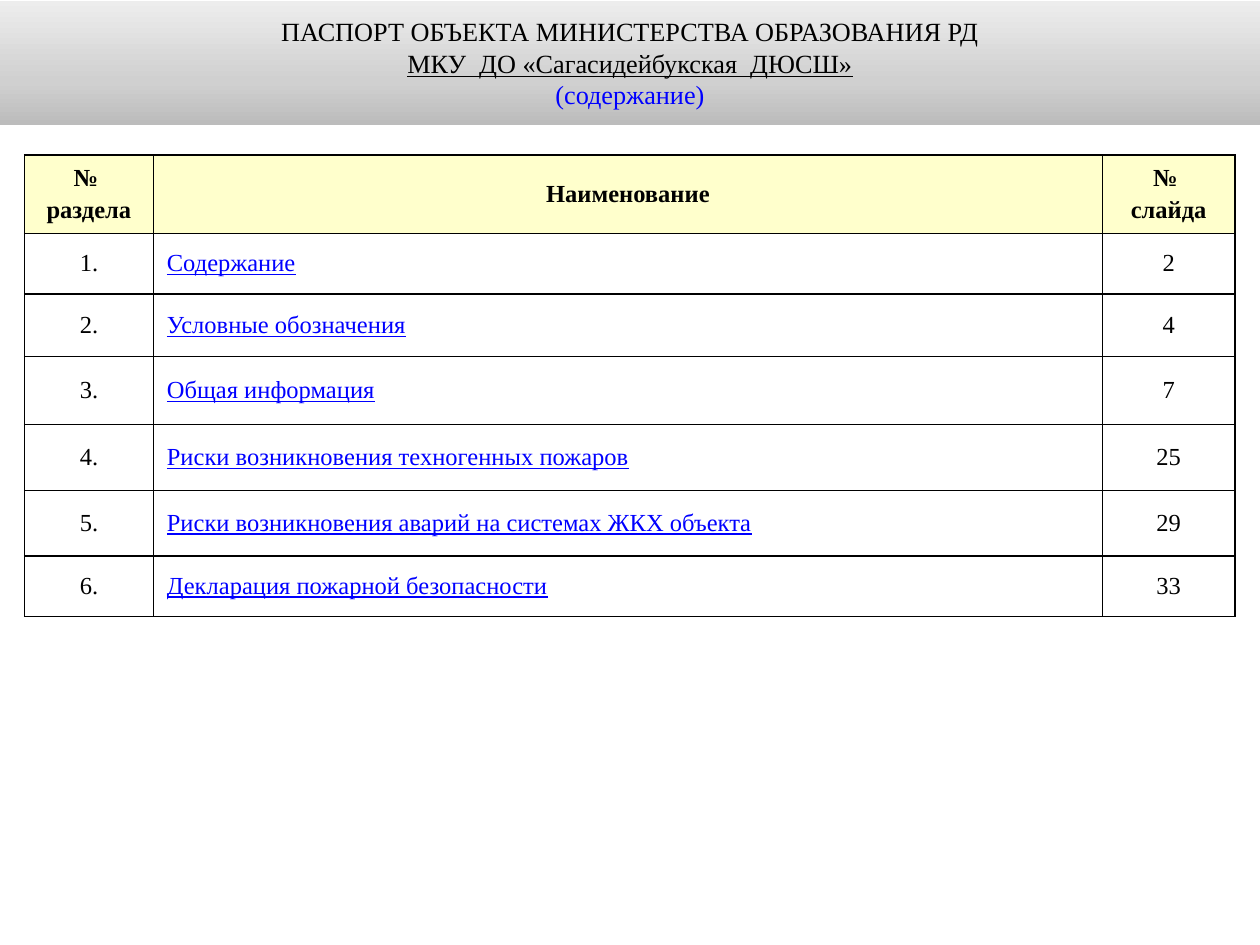
import copy
from dataclasses import dataclass

import pptx
import pptx.dml.color
import pptx.enum.text
import pptx.oxml
import pptx.oxml.ns
import pptx.util

Pt = pptx.util.Pt
Align = pptx.enum.text.PP_ALIGN
Anchor = pptx.enum.text.MSO_ANCHOR

FONT = "Times New Roman"
BLACK, BLUE, WHITE, CREAM = "000000", "0000FF", "FFFFFF", "FFFFCC"


@dataclass
class Style:
    size: float
    color: str = BLACK
    bold: bool = False
    under: bool = False


@dataclass
class Entry:
    num: str
    name: str
    page: str
    high: float


HEADS = ("№ \nраздела", "Наименование", "№ \nслайда")
WIDTHS = (73.7, 542.3, 75.7)
HEAD_HIGH = 44.9
ENTRIES = (
    Entry("1.", "Содержание", "2", 34.6),
    Entry("2.", "Условные обозначения", "4", 35.7),
    Entry("3.", "Общая информация", "7", 38.9),
    Entry("4.", "Риски возникновения техногенных пожаров", "25", 37.7),
    Entry("5.", "Риски возникновения аварий на системах ЖКХ объекта", "29", 37.4),
    Entry("6.", "Декларация пожарной безопасности", "33", 34.6),
)
TITLE = (
    ("ПАСПОРТ ОБЪЕКТА МИНИСТЕРСТВА ОБРАЗОВАНИЯ РД", Style(15)),
    ("МКУ  ДО «Сагасидейбукская  ДЮСШ»", Style(15, under=True)),
    ("(содержание)", Style(15, BLUE)),
)
PLAIN = Style(14)
HEAD = Style(14, bold=True)
LINK = Style(14, BLUE, under=True)


def paint(color, tone: str) -> None:
    color.rgb = pptx.dml.color.RGBColor.from_string(tone)


def format_line(para, style: Style, align) -> None:
    para.alignment = align
    for run in para.runs:
        font = run.font
        font.name, font.size = FONT, Pt(style.size)
        font.bold, font.underline = style.bold, style.under
        paint(font.color, style.color)


def add_edges(cell) -> None:
    props = cell._tc.get_or_add_tcPr()
    space = pptx.oxml.ns.nsdecls("a")
    for side in "LRTB":
        props.append(pptx.oxml.parse_xml(
            f'<a:ln{side} {space} w="{Pt(1)}"><a:solidFill>'
            f'<a:srgbClr val="{BLACK}"/></a:solidFill></a:ln{side}>'))


def fill_cell(cell, text: str, style: Style, tone: str, align, gap: float) -> None:
    add_edges(cell)
    cell.fill.solid()
    paint(cell.fill.fore_color, tone)
    cell.vertical_anchor = Anchor.MIDDLE
    cell.margin_left = cell.margin_right = Pt(7.7)
    cell.margin_top = cell.margin_bottom = Pt(3.6)
    cell.text_frame.text = text
    for para in cell.text_frame.paragraphs:
        para.space_before = Pt(gap)
        format_line(para, style, align)


def draw_title(shape) -> None:
    shape.left, shape.top = Pt(0), Pt(0.5)
    shape.width, shape.height = Pt(720), Pt(70.7)
    fill = shape.fill
    fill.gradient()
    fill.gradient_angle = 90
    stops = fill._fill._gradFill.gsLst
    stops.insert(1, copy.deepcopy(stops[0]))
    marks = ((0, "BCBCBC"), (0.35, "D0D0D0"), (1, "EDEDED"))
    for stop, (place, tone) in zip(fill.gradient_stops, marks):
        stop.position = place
        paint(stop.color, tone)
    frame = shape.text_frame
    frame.word_wrap = True
    frame.auto_size = pptx.enum.text.MSO_AUTO_SIZE.NONE
    frame.vertical_anchor = Anchor.MIDDLE
    frame.text = "\n".join(text for text, _ in TITLE)
    for para, (_, style) in zip(frame.paragraphs, TITLE):
        format_line(para, style, Align.CENTER)


def draw_table(slide) -> None:
    highs = [HEAD_HIGH] + [entry.high for entry in ENTRIES]
    table = slide.shapes.add_table(
        len(highs), len(WIDTHS), Pt(14), Pt(88.5),
        Pt(sum(WIDTHS)), Pt(sum(highs))).table
    table.first_row = table.horz_banding = False
    for col, wide in zip(table.columns, WIDTHS):
        col.width = Pt(wide)
    for row, high in zip(table.rows, highs):
        row.height = Pt(high)
    for col, text in enumerate(HEADS):
        fill_cell(table.cell(0, col), text, HEAD, CREAM, Align.CENTER, 2.8)
    for row, entry in enumerate(ENTRIES, 1):
        fill_cell(table.cell(row, 0), entry.num, PLAIN, WHITE, Align.CENTER, 0)
        fill_cell(table.cell(row, 1), entry.name, LINK, WHITE, Align.LEFT,
                  2.8 if row < 4 else 0)
        fill_cell(table.cell(row, 2), entry.page, PLAIN, WHITE, Align.CENTER,
                  2.8 if row < 3 else 0)


def main() -> None:
    deck = pptx.Presentation()
    deck.slide_width, deck.slide_height = Pt(720), Pt(540)
    slide = deck.slides.add_slide(deck.slide_layouts.get_by_name("Title Only"))
    draw_title(slide.shapes.title)
    draw_table(slide)
    deck.save("out.pptx")


if __name__ == "__main__":
    main()
